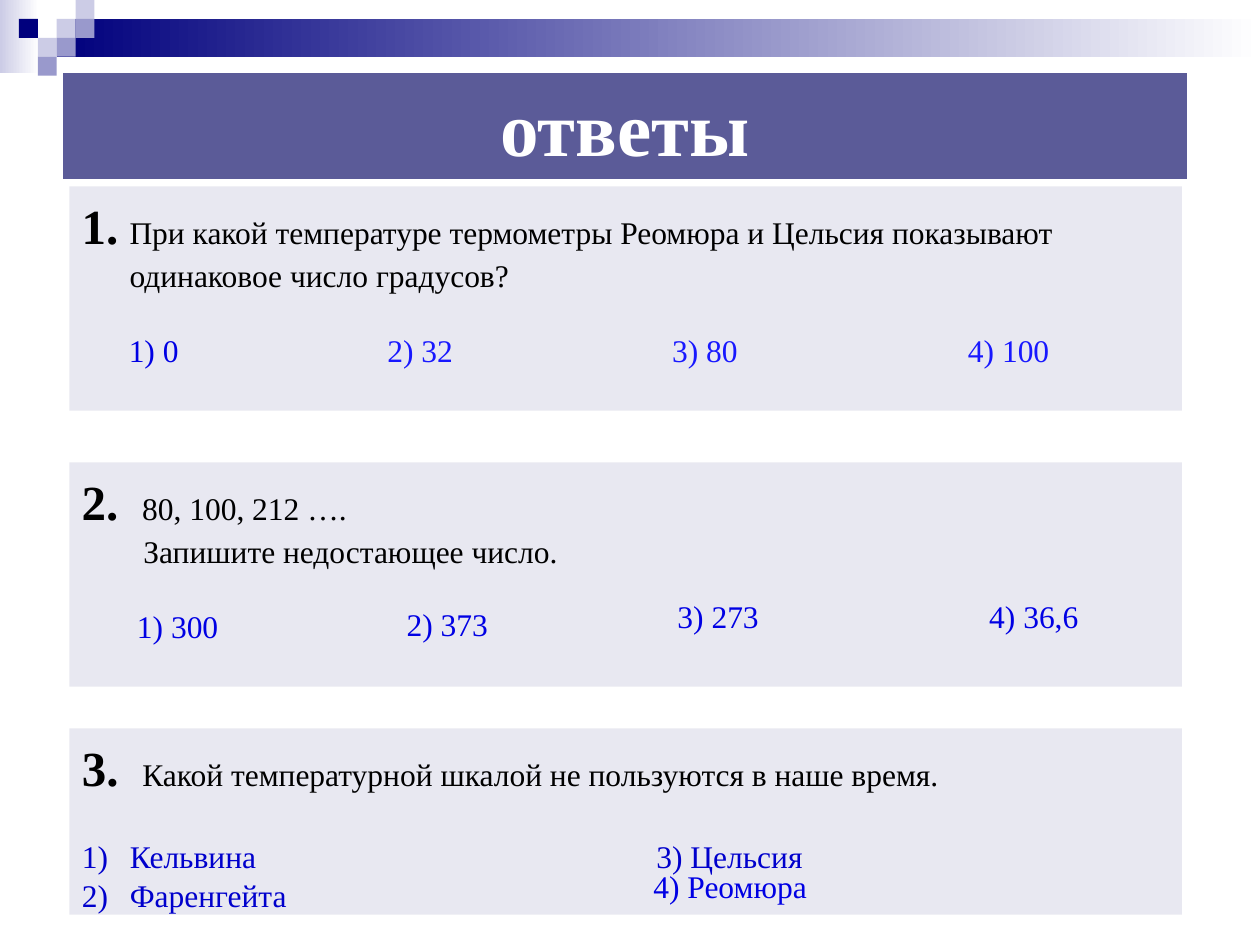
from lxml.etree import SubElement
from pptx import Presentation
from pptx.dml.color import RGBColor
from pptx.enum.shapes import MSO_SHAPE
from pptx.enum.text import MSO_ANCHOR, MSO_AUTO_SIZE, PP_ALIGN
from pptx.oxml.ns import qn
from pptx.util import Inches, Pt

FONT = "Times New Roman"
COLORS = {
    "navy": "00007D", "lilac": "CCCCE6", "violet": "9999CC", "white": "FFFFFF",
    "banner": "5B5B98", "panel": "E8E8F1", "black": "000000",
    "answer": "0000E4", "bright": "1818FF", "list": "0000CC",
}
SQUARE = 0.15
# column and row of each square in the corner mosaic
MOSAIC = [
    (3, 1, "lilac"), (4, 0, "lilac"), (4, 1, "violet"), (2, 2, "lilac"),
    (1, 1, "navy"), (3, 2, "violet"), (2, 3, "violet"),
]
PANEL_LEFT, PANEL_WIDTH = 0.55, 8.83
ANSWER_HEIGHT = 0.4
# left, top, width, text, colour
ANSWERS = [
    (0.92, 2.58, 0.6, "1) 0", "answer"),
    (2.97, 2.58, 0.73, "2) 32", "bright"),
    (5.23, 2.58, 0.73, "3) 80", "bright"),
    (7.58, 2.58, 0.85, "4) 100", "bright"),
    (0.94, 4.77, 0.94, "1) 300", "answer"),
    (3.08, 4.75, 0.94, "2) 373", "answer"),
    (5.23, 4.69, 0.94, "3) 273", "answer"),
    (7.58, 4.69, 1.25, "4) 36,6", "answer"),
    (5.08, 6.83, 1.43, "4) Реомюра", "answer"),
]


def color(name):
    return RGBColor.from_string(COLORS[name])


def place(shape, left, top, width, height):
    shape.left, shape.top = Inches(left), Inches(top)
    shape.width, shape.height = Inches(width), Inches(height)


def paint(shape, name):
    shape.fill.solid()
    shape.fill.fore_color.rgb = color(name)


def add_rectangle(page, left, top, width, height):
    box = page.shapes.add_shape(
        MSO_SHAPE.RECTANGLE, Inches(left), Inches(top), Inches(width), Inches(height))
    box.shadow.inherit = False
    box.line.fill.background()
    return box


def add_gradient(page, left, top, width, height, start):
    fill = add_rectangle(page, left, top, width, height).fill
    fill.gradient()
    fill.gradient_angle = 0
    for stop, name in zip(fill.gradient_stops, (start, "white")):
        stop.color.rgb = color(name)


def set_font(font, size, name, bold=False):
    font.name, font.size, font.bold = FONT, Pt(size), bold
    font.color.rgb = color(name)


def add_header(page):
    add_gradient(page, 0, 0, 0.31, 0.58, "lilac")
    add_gradient(page, 0.45, 0.15, 9.55, 0.3, "navy")
    for column, row, name in MOSAIC:
        paint(add_rectangle(page, column * SQUARE, row * SQUARE, SQUARE, SQUARE), name)


def format_paragraph(para, margin, indent, before=0):
    para.alignment = PP_ALIGN.LEFT
    para.line_spacing = 1.05
    para.space_before = Pt(before)
    properties = para._p.get_or_add_pPr()
    properties.set("marL", str(Inches(margin)))
    properties.set("indent", str(Inches(indent)))
    return properties


def fill_question(box, top, height, number, question, margin):
    """Turn a shape into a panel whose question hangs behind a large number."""
    place(box, PANEL_LEFT, top, PANEL_WIDTH, height)
    paint(box, "panel")
    frame = box.text_frame
    frame.word_wrap = True
    frame.auto_size = MSO_AUTO_SIZE.NONE
    frame.vertical_anchor = MSO_ANCHOR.TOP
    para = frame.paragraphs[0]
    SubElement(format_paragraph(para, margin, -margin), qn("a:buNone"))
    for text, size, bold in ((f"{number}.\t", 28, True), (question, 18, False)):
        span = para.add_run()
        span.text = text
        set_font(span.font, size, "black", bold)
    return frame


def add_numbered_item(frame, text, before=0, tab=None):
    para = frame.add_paragraph()
    properties = format_paragraph(para, 0.38, -0.38, before)
    SubElement(properties, qn("a:buFontTx"))
    SubElement(properties, qn("a:buAutoNum"), type="arabicParenR")
    if tab:
        tabs = SubElement(properties, qn("a:tabLst"))
        SubElement(tabs, qn("a:tab"), pos=str(Inches(tab)), algn="l")
    para.add_run().text = text
    set_font(para.font, 18, "list")


def add_answer(page, left, top, width, text, name):
    box = page.shapes.add_textbox(
        Inches(left), Inches(top), Inches(width), Inches(ANSWER_HEIGHT))
    box.text_frame.word_wrap = False
    para = box.text_frame.paragraphs[0]
    para.text = text
    para.alignment = PP_ALIGN.CENTER
    set_font(para.font, 18, name)


def fill_title(title, text):
    place(title, 0.5, 0.58, 8.92, 0.84)
    paint(title, "banner")
    frame = title.text_frame
    frame.text = text
    frame.auto_size = MSO_AUTO_SIZE.NONE
    frame.vertical_anchor = MSO_ANCHOR.MIDDLE
    para = frame.paragraphs[0]
    para.alignment = PP_ALIGN.CENTER
    set_font(para.font, 44, "white", True)


def main():
    deck = Presentation()
    deck.slide_width, deck.slide_height = Inches(10), Inches(7.5)
    page = deck.slides.add_slide(deck.slide_layouts[1])
    add_header(page)
    fill_title(page.shapes.title, "ответы")

    fill_question(
        add_rectangle(page, 0, 0, 1, 1), 1.48, 1.78, 1,
        "При какой температуре термометры Реомюра и Цельсия показывают "
        "одинаковое число градусов?", 0.38)

    missing = fill_question(
        add_rectangle(page, 0, 0, 1, 1), 3.67, 1.78, 2, "80, 100, 212 ….", 0.48)
    para = missing.add_paragraph()
    format_paragraph(para, 0.49, 0)
    para.add_run().text = "Запишите недостающее число."
    set_font(para.font, 18, "black")

    scales = fill_question(
        page.placeholders[1], 5.78, 1.48, 3,
        "Какой температурной шкалой не пользуются в наше время.", 0.48)
    add_numbered_item(scales, "Кельвина\t3) Цельсия", before=22, tab=4.56)
    add_numbered_item(scales, "Фаренгейта")

    for answer in ANSWERS:
        add_answer(page, *answer)
    deck.save("out.pptx")


if __name__ == "__main__":
    main()
